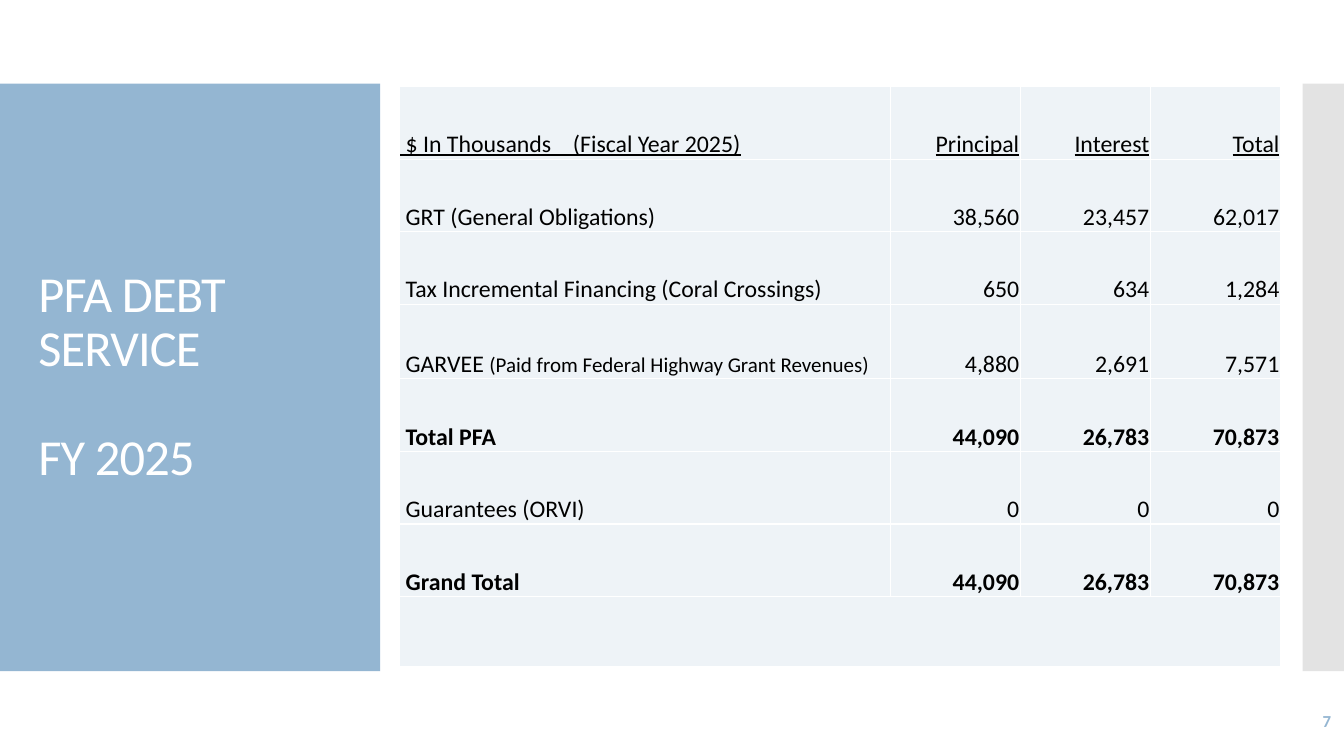
from lxml import etree
from pptx import Presentation
from pptx.dml.color import RGBColor
from pptx.enum.shapes import MSO_SHAPE
from pptx.enum.text import MSO_ANCHOR, MSO_AUTO_SIZE, PP_ALIGN
from pptx.oxml.ns import qn
from pptx.util import Inches, Pt

BLUE = RGBColor(0x94, 0xB6, 0xD2)
GREY = RGBColor(0xC8, 0xC8, 0xC8)
PALE = RGBColor(0xEE, 0xF3, 0xF7)
WHITE = RGBColor(0xFF, 0xFF, 0xFF)
BLACK = RGBColor(0x00, 0x00, 0x00)
FONT = "Calibri"

COL_WIDTHS = [4.87, 1.29, 1.29, 1.29]
ROW_HEIGHTS = [0.72, 0.72, 0.72, 0.74, 0.72, 0.72, 0.72, 0.7]
HEADER = [" $ In Thousands    (Fiscal Year 2025)", "Principal", "Interest", "Total"]
DEBT_ROWS = [
    [" GRT (General Obligations)", "38,560", "23,457", "62,017"],
    [" Tax Incremental Financing (Coral Crossings)", "650", "634", "1,284"],
    [" GARVEE ", "4,880", "2,691", "7,571"],
    [" Total PFA", "44,090", "26,783", "70,873"],
    [" Guarantees (ORVI)", "0", "0", "0"],
    [" Grand Total", "44,090", "26,783", "70,873"],
]
GARVEE_NOTE = "(Paid from Federal Highway Grant Revenues)"


def style_run(r, size, color, bold=False, underline=False):
    r.font.name = FONT
    r.font.size = Pt(size)
    r.font.color.rgb = color
    r.font.bold = bold
    r.font.underline = underline


def add_panel(slide, left, top, width, height, color, opacity=100):
    sp = slide.shapes.add_shape(MSO_SHAPE.RECTANGLE, Inches(left), Inches(top),
                                Inches(width), Inches(height))
    sp.shadow.inherit = False
    sp.fill.solid()
    sp.fill.fore_color.rgb = color
    sp.line.fill.background()
    if opacity < 100:
        clr = sp.fill._xPr.find(qn("a:solidFill"))[0]
        etree.SubElement(clr, qn("a:alpha"), val=str(opacity * 1000))


def add_title(slide, left, top, width, height):
    title = slide.shapes.title
    slide.shapes._spTree.append(title._element)  # bring in front of the panel
    title.left, title.top = Inches(left), Inches(top)
    title.width, title.height = Inches(width), Inches(height)
    tf = title.text_frame
    tf.text = "PFA DEBT SERVICE\nFY 2025"
    tf.word_wrap = True
    tf.auto_size = MSO_AUTO_SIZE.NONE
    tf.vertical_anchor = MSO_ANCHOR.MIDDLE
    for p in tf.paragraphs:
        p.alignment = PP_ALIGN.LEFT
        p.line_spacing = 0.9
        p.space_before = Pt(0)
        r = p.runs[0]
        style_run(r, 36, WHITE)
        r.font._element.set("spc", "-60")
    tf.paragraphs[1].space_before = Pt(39)


def add_slide_number(slide, left, top, width, height):
    tf = slide.shapes.add_textbox(Inches(left), Inches(top),
                                  Inches(width), Inches(height)).text_frame
    tf.text = "7"
    tf.word_wrap = True
    tf.vertical_anchor = MSO_ANCHOR.MIDDLE
    p = tf.paragraphs[0]
    p.alignment = PP_ALIGN.RIGHT
    style_run(p.runs[0], 12, BLUE, bold=True)


def format_cell(cell):
    """Give the cell white borders, a pale fill and tight margins."""
    cell.margin_left = cell.margin_right = cell.margin_top = Inches(0.01)
    cell.margin_bottom = 0
    cell.vertical_anchor = MSO_ANCHOR.BOTTOM
    tcPr = cell._tc.get_or_add_tcPr()
    for side in ("a:lnL", "a:lnR", "a:lnT", "a:lnB"):
        ln = etree.SubElement(tcPr, qn(side), w=str(Pt(1)))
        fill = etree.SubElement(ln, qn("a:solidFill"))
        etree.SubElement(fill, qn("a:srgbClr"), val=str(WHITE))
    cell.fill.solid()
    cell.fill.fore_color.rgb = PALE


def add_debt_table(slide, left, top):
    table = slide.shapes.add_table(
        len(ROW_HEIGHTS), len(COL_WIDTHS), Inches(left), Inches(top),
        Inches(sum(COL_WIDTHS)), Inches(sum(ROW_HEIGHTS))).table
    table.first_row = table.horz_banding = False
    for col, width in zip(table.columns, COL_WIDTHS):
        col.width = Inches(width)
    for row, height in zip(table.rows, ROW_HEIGHTS):
        row.height = Inches(height)
    for cell in table.iter_cells():
        format_cell(cell)

    for i, values in enumerate([HEADER] + DEBT_ROWS):
        for j, value in enumerate(values):
            cell = table.cell(i, j)
            cell.text = value
            p = cell.text_frame.paragraphs[0]
            p.alignment = PP_ALIGN.RIGHT if j else PP_ALIGN.LEFT
            style_run(p.runs[0], 17, BLACK, bold="Total" in values[0],
                      underline=i == 0)
            if value == " GARVEE ":
                r = p.add_run()
                r.text = GARVEE_NOTE
                style_run(r, 15, BLACK)
    last = len(ROW_HEIGHTS) - 1
    table.cell(last, 0).merge(table.cell(last, len(COL_WIDTHS) - 1))


def main():
    prs = Presentation()
    prs.slide_width, prs.slide_height = Inches(13.33), Inches(7.5)
    slide = prs.slides.add_slide(prs.slide_layouts[5])
    add_panel(slide, 0, 0.83, 3.77, 5.83, BLUE)
    add_panel(slide, 12.92, 0.83, 0.41, 5.83, GREY, opacity=50)
    add_title(slide, 0.28, 1.23, 3.22, 5.03)
    add_slide_number(slide, 11.63, 6.95, 1.67, 0.4)
    add_debt_table(slide, 3.96, 0.86)
    prs.save("out.pptx")


if __name__ == "__main__":
    main()
